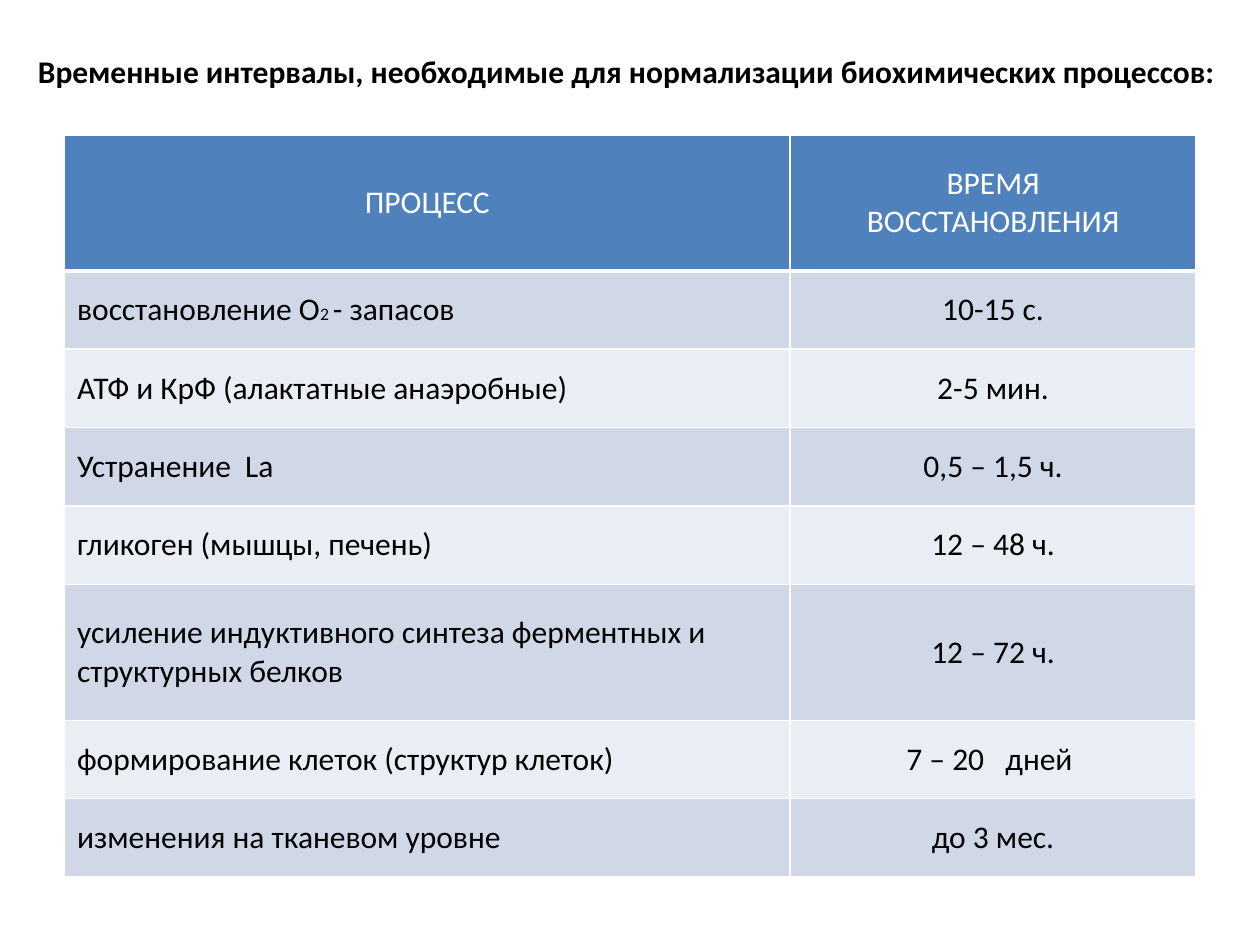
from dataclasses import dataclass

from lxml import etree
from pptx import Presentation
from pptx.dml.color import RGBColor
from pptx.enum.text import MSO_ANCHOR, MSO_AUTO_SIZE, PP_ALIGN
from pptx.oxml.ns import qn
from pptx.table import _Cell
from pptx.text.text import _Paragraph
from pptx.util import Cm, Pt

LEFT, CENTER = PP_ALIGN.LEFT, PP_ALIGN.CENTER
MIDDLE = MSO_ANCHOR.MIDDLE
NO_AUTOFIT = MSO_AUTO_SIZE.NONE

BLACK = RGBColor(0x00, 0x00, 0x00)
WHITE = RGBColor(0xFF, 0xFF, 0xFF)
HEADER_BLUE = RGBColor(0x4F, 0x81, 0xBD)
BAND_DARK = RGBColor(0xD0, 0xD8, 0xE8)
BAND_LIGHT = RGBColor(0xE9, 0xED, 0xF4)

FONT = "Calibri"
TEXT_SIZE = 18
SUBSCRIPT_SIZE = 10
SINGLE_ROW, DOUBLE_ROW = Cm(1.58), Cm(2.74)
COLUMN_WIDTHS = (Cm(14.63), Cm(8.18))


@dataclass(frozen=True)
class TextRun:
    text: str
    size: int = TEXT_SIZE


@dataclass(frozen=True)
class Recovery:
    process: tuple[TextRun, ...]
    time: str
    height: int = SINGLE_ROW


RECOVERIES = (
    Recovery((TextRun("восстановление О"), TextRun("2 ", SUBSCRIPT_SIZE),
              TextRun("- запасов")), "10-15 с."),
    Recovery((TextRun("АТФ и КрФ (алактатные анаэробные)"),), "2-5 мин."),
    Recovery((TextRun("Устранение  La"),), "0,5 – 1,5 ч."),
    Recovery((TextRun("гликоген (мышцы, печень)"),), "12 – 48 ч."),
    Recovery((TextRun("усиление индуктивного синтеза ферментных и структурных белков"),),
             "12 – 72 ч.", DOUBLE_ROW),
    Recovery((TextRun("формирование клеток (структур клеток)"),), "7 – 20   дней "),
    Recovery((TextRun("изменения на тканевом уровне"),), "до 3 мес."),
)


def add_runs(paragraph: _Paragraph, runs: tuple[TextRun, ...], color: RGBColor,
             align: PP_ALIGN, bold: bool = False) -> None:
    paragraph.alignment = align
    for part in runs:
        run = paragraph.add_run()
        run.text = part.text
        run.font.name = FONT
        run.font.size = Pt(part.size)
        run.font.bold = bold
        run.font.color.rgb = color


def set_borders(cell: _Cell, bottom: float) -> None:
    """Add white borders; they must come before the fill in the cell properties."""
    properties = cell._tc.get_or_add_tcPr()
    widths = {"a:lnL": 1, "a:lnR": 1, "a:lnT": 1, "a:lnB": bottom}
    for position, (tag, width) in enumerate(widths.items()):
        line = etree.Element(qn(tag), w=str(Pt(width)))
        fill = etree.SubElement(line, qn("a:solidFill"))
        etree.SubElement(fill, qn("a:srgbClr"), val=str(WHITE))
        properties.insert(position, line)


def fill_cell(cell: _Cell, paragraphs: tuple[tuple[TextRun, ...], ...], fill: RGBColor,
              color: RGBColor, align: PP_ALIGN, bottom: float = 1) -> None:
    cell.fill.solid()
    cell.fill.fore_color.rgb = fill
    cell.vertical_anchor = MIDDLE
    set_borders(cell, bottom)
    frame = cell.text_frame
    for index, runs in enumerate(paragraphs):
        paragraph = frame.add_paragraph() if index else frame.paragraphs[0]
        add_runs(paragraph, runs, color, align)


def main() -> None:
    deck = Presentation()
    deck.slide_width, deck.slide_height = Cm(25.4), Cm(19.05)
    slide = deck.slides.add_slide(deck.slide_layouts[5])

    # Title
    heading = slide.shapes.title
    heading.left, heading.top = Cm(0.51), Cm(0.91)
    heading.width, heading.height = Cm(24.89), Cm(1.02)
    heading.text_frame.word_wrap = True
    heading.text_frame.auto_size = NO_AUTOFIT
    add_runs(heading.text_frame.paragraphs[0],
             (TextRun("Временные интервалы, необходимые для нормализации "
                      "биохимических процессов:"),), BLACK, LEFT, bold=True)

    # Table grid
    heights = (DOUBLE_ROW, *(recovery.height for recovery in RECOVERIES))
    recovery_table = slide.shapes.add_table(
        len(heights), len(COLUMN_WIDTHS), Cm(1.3), Cm(2.72),
        sum(COLUMN_WIDTHS), sum(heights)).table
    for column, width in zip(recovery_table.columns, COLUMN_WIDTHS):
        column.width = width
    for row, height in zip(recovery_table.rows, heights):
        row.height = height

    # Header row
    headers = (("ПРОЦЕСС",), ("ВРЕМЯ", "ВОССТАНОВЛЕНИЯ"))
    for column_index, lines in enumerate(headers):
        fill_cell(recovery_table.cell(0, column_index),
                  tuple((TextRun(line),) for line in lines),
                  HEADER_BLUE, WHITE, CENTER, bottom=3)

    # Process rows in alternating bands
    for row_index, recovery in enumerate(RECOVERIES, start=1):
        band = BAND_DARK if row_index % 2 else BAND_LIGHT
        fill_cell(recovery_table.cell(row_index, 0), (recovery.process,),
                  band, BLACK, LEFT)
        fill_cell(recovery_table.cell(row_index, 1), ((TextRun(recovery.time),),),
                  band, BLACK, CENTER)

    deck.save("out.pptx")


if __name__ == "__main__":
    main()
